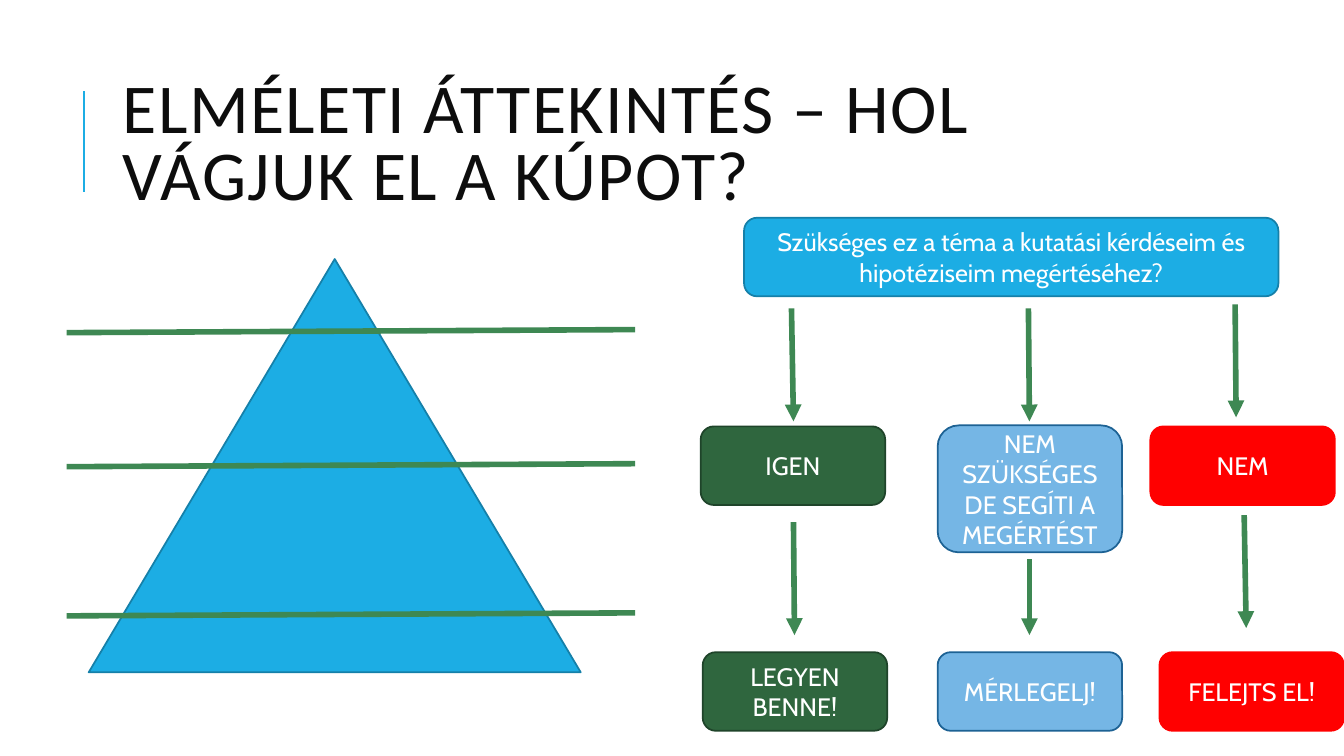
from dataclasses import dataclass

from lxml.etree import SubElement
from pptx import Presentation
from pptx.dml.color import RGBColor
from pptx.enum.shapes import MSO_CONNECTOR, MSO_SHAPE
from pptx.enum.text import MSO_ANCHOR, PP_ALIGN
from pptx.oxml.ns import qn
from pptx.shapes.autoshape import Shape
from pptx.slide import Slide
from pptx.util import Emu, Pt

PX = 9144
SLIDE_WIDTH, SLIDE_HEIGHT = 1333, 750
BOX_WIDTH, BOX_HEIGHT = 183, 78

WHITE = RGBColor(0xFF, 0xFF, 0xFF)
INK = RGBColor(0x0D, 0x0D, 0x0D)
BLUE = RGBColor(0x1C, 0xAD, 0xE4)
BLUE_EDGE = RGBColor(0x15, 0x80, 0xA9)
GREEN = RGBColor(0x3E, 0x88, 0x53)
DARK_GREEN = RGBColor(0x2F, 0x66, 0x3E)
DARK_GREEN_EDGE = RGBColor(0x1F, 0x44, 0x2A)
PALE_BLUE = RGBColor(0x75, 0xB6, 0xE5)
PALE_BLUE_EDGE = RGBColor(0x1D, 0x62, 0x94)
RED = RGBColor(0xFF, 0x00, 0x00)


@dataclass(frozen=True)
class Box:
    """A filled shape with an optional centred label."""
    left: int
    top: int
    fill: RGBColor
    edge: RGBColor
    label: str = ""
    width: int = BOX_WIDTH
    height: int = BOX_HEIGHT
    kind: MSO_SHAPE = MSO_SHAPE.ROUNDED_RECTANGLE


@dataclass(frozen=True)
class Line:
    """A straight line, with an arrowhead at its end if asked."""
    start: tuple[int, int]
    end: tuple[int, int]
    arrow: bool = True
    color: RGBColor = GREEN
    weight: float = 4


TITLE_RULE = Line((83, 190), (83, 90), False, BLUE, 1.5)
CONE = Box(88, 257, BLUE, BLUE_EDGE, "", 488, 410, MSO_SHAPE.FLOWCHART_EXTRACT)
CUTS = [Line((66, top), (630, top - 3), False) for top in (330, 463, 611)]
BOXES = [
    Box(738, 216, BLUE, BLUE_EDGE,
        "Szükséges ez a téma a kutatási kérdéseim és hipotéziseim megértéséhez?", 530),
    Box(695, 423, DARK_GREEN, DARK_GREEN_EDGE, "IGEN"),
    Box(697, 647, DARK_GREEN, DARK_GREEN_EDGE, "LEGYEN BENNE!"),
    Box(930, 422, PALE_BLUE, PALE_BLUE_EDGE, "NEM SZÜKSÉGES DE SEGÍTI A MEGÉRTÉST", height=126),
    Box(930, 647, PALE_BLUE, PALE_BLUE_EDGE, "MÉRLEGELJ!"),
    Box(1141, 423, RED, RED, "NEM"),
    Box(1150, 647, RED, RED, "FELEJTS EL!"),
]
ARROWS = [
    Line((785, 306), (787, 418)),
    Line((787, 518), (788, 630)),
    Line((1020, 306), (1021, 418)),
    Line((1021, 555), (1021, 630)),
    Line((1225, 302), (1226, 414)),
    Line((1234, 511), (1236, 623)),
]


def px(length: int) -> Emu:
    """Turn px into EMU."""
    return Emu(length * PX)


def write_text(shape: Shape, text: str, font_name: str, size: int, color: RGBColor) -> None:
    """Put one wrapped, vertically centred paragraph into a shape."""
    frame = shape.text_frame
    frame.text = text
    frame.word_wrap = True
    frame.vertical_anchor = MSO_ANCHOR.MIDDLE
    font = frame.paragraphs[0].runs[0].font
    font.name, font.size = font_name, Pt(size)
    font.color.rgb = color


def draw_title(slide: Slide) -> None:
    """Draw the spaced heading."""
    title = slide.shapes.add_textbox(px(112), px(64), px(1063), px(164))
    write_text(title, "ELMÉLETI ÁTTEKINTÉS – HOL VÁGJUK EL A KÚPOT?", "Calibri", 50, INK)
    paragraph = title.text_frame.paragraphs[0]
    paragraph.line_spacing = 0.8
    paragraph.runs[0].font._element.set("spc", "100")


def draw_box(slide: Slide, box: Box) -> None:
    """Draw one shape and its label."""
    shape = slide.shapes.add_shape(
        box.kind, px(box.left), px(box.top), px(box.width), px(box.height))
    shape.shadow.inherit = False
    shape.fill.solid()
    shape.fill.fore_color.rgb = box.fill
    shape.line.color.rgb = box.edge
    shape.line.width = Pt(1.25)
    if box.label:
        write_text(shape, box.label, "Cabin", 18, WHITE)
        shape.text_frame.paragraphs[0].alignment = PP_ALIGN.CENTER


def draw_line(slide: Slide, line: Line) -> None:
    """Draw one straight line or arrow."""
    connector = slide.shapes.add_connector(
        MSO_CONNECTOR.STRAIGHT, *map(px, line.start + line.end))
    connector.line.color.rgb = line.color
    connector.line.width = Pt(line.weight)
    if line.arrow:
        SubElement(connector.line._get_or_add_ln(), qn("a:tailEnd"), type="triangle")
    SubElement(connector._element.spPr, qn("a:effectLst"))


def main() -> None:
    """Build and save the slide."""
    presentation = Presentation()
    presentation.slide_width = px(SLIDE_WIDTH)
    presentation.slide_height = px(SLIDE_HEIGHT)
    slide = presentation.slides.add_slide(presentation.slide_layouts[6])
    draw_line(slide, TITLE_RULE)
    draw_title(slide)
    for box in [CONE, *BOXES]:
        draw_box(slide, box)
    for line in CUTS + ARROWS:
        draw_line(slide, line)
    presentation.save("out.pptx")


if __name__ == "__main__":
    main()
